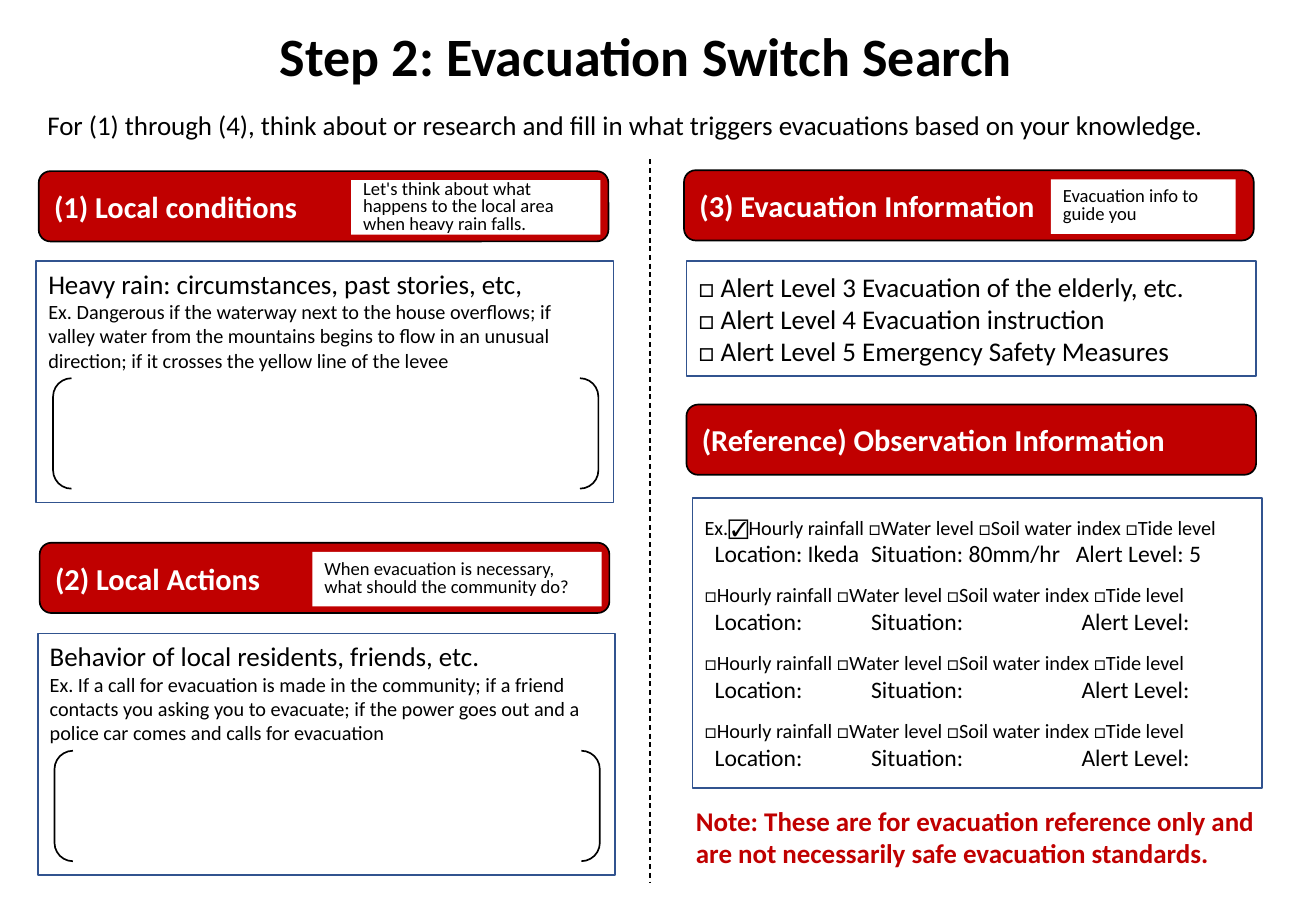
import pptx
import pptx.dml.color
import pptx.enum.dml
import pptx.enum.shapes
import pptx.enum.text
import pptx.oxml
import pptx.oxml.ns
import pptx.util
from pptx.util import Cm

COLOURS = {"red": "C00000", "blue": "31538F", "black": "000000", "white": "FFFFFF"}
SHAPES = pptx.enum.shapes.MSO_SHAPE
ANCHOR = pptx.enum.text.MSO_ANCHOR
COLUMN_WIDTH = 11.91
HEADER_HEIGHT = 1.47
CALLOUT_HEIGHT = 1.14
KINDS = "□Hourly rainfall □Water level □Soil water index □Tide level"
BLANK_ENTRY = (KINDS, "\tLocation:\tSituation:\tAlert Level:")
ENTRIES = [
    ("Ex.☑" + KINDS[1:], "\tLocation: Ikeda\tSituation: 80mm/hr\tAlert Level: 5"),
    BLANK_ENTRY, BLANK_ENTRY, BLANK_ENTRY,
]


def colour(name):
    return pptx.dml.color.RGBColor.from_string(COLOURS[name])


def add_box(slide, box, kind=SHAPES.RECTANGLE, fill=None, line=None):
    """Add a shape; box is (left, top, width, height) in centimetres."""
    shape = slide.shapes.add_shape(kind, *map(Cm, box))
    shape.shadow.inherit = False
    if fill:
        shape.fill.solid()
        shape.fill.fore_color.rgb = colour(fill)
    else:
        shape.fill.background()
    if line:
        shape.line.color.rgb = colour(line)
        shape.line.width = pptx.util.Pt(1)
    else:
        shape.line.fill.background()
    return shape


def add_text(shape, text, size=16, color="black", bold=False, align="LEFT",
             anchor=ANCHOR.MIDDLE, spacing=None, before=0, tabs=()):
    """Write one paragraph, after any that the shape already holds."""
    frame = shape.text_frame
    frame.word_wrap = True
    frame.vertical_anchor = anchor
    paragraph = frame.add_paragraph() if frame.text else frame.paragraphs[0]
    paragraph.alignment = getattr(pptx.enum.text.PP_ALIGN, align)
    paragraph.space_before = pptx.util.Pt(before)
    if spacing:
        paragraph.line_spacing = spacing
    if tabs:
        properties = paragraph._p.get_or_add_pPr()
        tab_list = pptx.oxml.parse_xml(
            f'<a:tabLst {pptx.oxml.ns.nsdecls("a")}>'
            + "".join(f'<a:tab pos="{Cm(tab)}" algn="l"/>' for tab in tabs)
            + "</a:tabLst>")
        properties.append(tab_list)
    run = paragraph.add_run()
    run.text = text
    run.font.name = "Calibri"
    run.font.size = pptx.util.Pt(size)
    run.font.bold = bold
    run.font.color.rgb = colour(color)


def add_textbox(slide, box, text, **text_format):
    add_text(slide.shapes.add_textbox(*map(Cm, box)), text, **text_format)


def add_header(slide, left, top, title, callout=None, callout_left=0, callout_width=0):
    """Red section bar, with an optional white callout placed inside it."""
    bar = add_box(slide, (left, top, COLUMN_WIDTH, HEADER_HEIGHT),
                  SHAPES.ROUNDED_RECTANGLE, "red", "black")
    add_text(bar, title, size=18, color="white", bold=True)
    if callout:
        note = add_box(slide, (left + callout_left, top + 0.19, callout_width, CALLOUT_HEIGHT),
                       fill="white")
        add_text(note, callout, size=11, spacing=0.8)


def add_answer_panel(slide, box, prompt, example):
    """Prompt and example above a bracketed space for the answer."""
    left, top, width, height = box
    panel = add_box(slide, box, line="blue")
    add_text(panel, prompt, anchor=ANCHOR.TOP)
    add_text(panel, example, size=12, anchor=ANCHOR.TOP)
    add_box(slide, (left + 0.35, top + 2.45, 11.4, 2.31), SHAPES.DOUBLE_BRACKET, line="black")


def add_alert_panel(slide, box, alerts):
    panel = add_box(slide, box, line="blue")
    for alert in alerts:
        add_text(panel, "□ " + alert)


def add_observation_panel(slide, box):
    panel = add_box(slide, box, line="blue")
    for index, (kinds, details) in enumerate(ENTRIES):
        add_text(panel, kinds, size=12, before=9 if index else 0)
        add_text(panel, details, size=14, tabs=(0.21, 3.48, 7.76 if index == 0 else 7.88))


def add_divider(slide, x, top, bottom):
    line = slide.shapes.add_connector(
        pptx.enum.shapes.MSO_CONNECTOR.STRAIGHT, Cm(x), Cm(top), Cm(x), Cm(bottom))
    line.line.color.rgb = colour("black")
    line.line.width = pptx.util.Pt(0.75)
    line.line.dash_style = pptx.enum.dml.MSO_LINE.DASH
    line._element.spPr.append(
        pptx.oxml.parse_xml(f'<a:effectLst {pptx.oxml.ns.nsdecls("a")}/>'))


def main():
    presentation = pptx.Presentation()
    presentation.slide_width = Cm(27.51)
    presentation.slide_height = Cm(19.05)
    slide = presentation.slides.add_slide(presentation.slide_layouts[6])

    # Title and instruction
    add_textbox(slide, (0.15, 0.25, 26.72, 1.8), "Step 2: Evacuation Switch Search",
                size=32, bold=True, align="CENTER")
    add_textbox(slide, (0.74, 2.03, 25.96, 1.14),
                "For (1) through (4), think about or research and fill in what "
                "triggers evacuations based on your knowledge.")
    add_divider(slide, 13.59, 3.33, 18.44)

    # Left column
    add_header(slide, 0.81, 3.58, "(1) Local conditions",
               "Let's think about what happens to the local area when heavy rain falls.",
               6.53, 5.21)
    add_answer_panel(slide, (0.76, 5.46, 12.07, 5.05),
                     "Heavy rain: circumstances, past stories, etc,",
                     "Ex. Dangerous if the waterway next to the house overflows; if valley "
                     "water from the mountains begins to flow in an unusual direction; if it "
                     "crosses the yellow line of the levee")
    add_header(slide, 0.83, 11.35, "(2) Local Actions",
               "When evacuation is necessary, what should the community do?", 5.7, 6.05)
    add_answer_panel(slide, (0.79, 13.25, 12.07, 5.05),
                     "Behavior of local residents, friends, etc.",
                     "Ex. If a call for evacuation is made in the community; if a friend "
                     "contacts you asking you to evacuate; if the power goes out and a police "
                     "car comes and calls for evacuation")

    # Right column
    add_header(slide, 14.3, 3.56, "(3) Evacuation Information",
               "Evacuation info to guide you", 7.67, 3.86)
    add_alert_panel(slide, (14.35, 5.46, COLUMN_WIDTH, 2.41),
                    ["Alert Level 3 Evacuation of the elderly, etc.",
                     "Alert Level 4 Evacuation instruction",
                     "Alert Level 5 Emergency Safety Measures"])
    add_header(slide, 14.35, 8.46, "(Reference) Observation Information")
    add_observation_panel(slide, (14.48, 10.41, COLUMN_WIDTH, 6.07))
    add_textbox(slide, (14.3, 16.76, 12.91, HEADER_HEIGHT),
                "Note: These are for evacuation reference only and are not necessarily "
                "safe evacuation standards.", color="red", bold=True)

    presentation.save("out.pptx")


if __name__ == "__main__":
    main()
